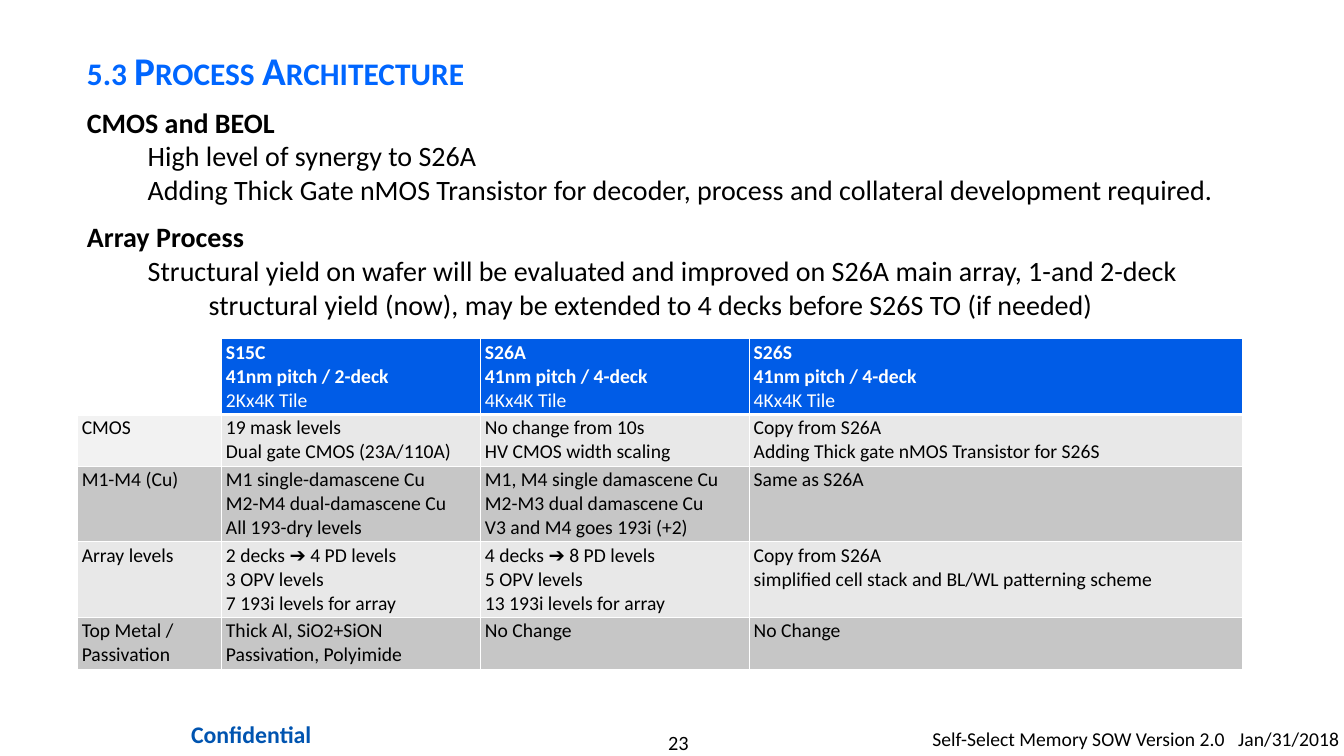
import pptx
import pptx.dml.color
import pptx.enum.text
import pptx.oxml.ns
import pptx.util
from lxml import etree

Pt = pptx.util.Pt
RGBColor = pptx.dml.color.RGBColor
PP_ALIGN = pptx.enum.text.PP_ALIGN
MSO_ANCHOR = pptx.enum.text.MSO_ANCHOR
qn = pptx.oxml.ns.qn

BLACK = RGBColor(0x00, 0x00, 0x00)
WHITE = RGBColor(0xFF, 0xFF, 0xFF)
TITLE_BLUE = RGBColor(0x00, 0x66, 0xFF)
FOOTER_BLUE = RGBColor(0x00, 0x54, 0xB0)
HEADER_BLUE = RGBColor(0x00, 0x5C, 0xE7)
CMOS_GREY = RGBColor(0xF2, 0xF2, 0xF2)
LIGHT_GREY = RGBColor(0xE8, 0xE8, 0xE8)
DARK_GREY = RGBColor(0xC6, 0xC6, 0xC6)

BODY = [
    ("CMOS and BEOL", [
        "High level of synergy to S26A",
        "Adding Thick Gate nMOS Transistor for decoder, process and collateral "
        "development required."]),
    ("Array Process", [
        "Structural yield on wafer will be evaluated and improved on S26A main array, "
        "1-and 2-deck structural yield (now), may be extended to 4 decks before S26S TO "
        "(if needed)"]),
]

COLUMN_WIDTHS = [103, 185, 192, 352]
ROW_HEIGHTS = [54, 37, 54, 54, 37]
TABLE = [
    ["",
     "S15C\n41nm pitch / 2-deck\n2Kx4K Tile",
     "S26A\n41nm pitch / 4-deck\n4Kx4K Tile",
     "S26S\n41nm pitch / 4-deck\n4Kx4K Tile"],
    ["CMOS",
     "19 mask levels\nDual gate CMOS (23A/110A)",
     "No change from 10s\nHV CMOS width scaling",
     "Copy from S26A\nAdding Thick gate nMOS Transistor for S26S"],
    ["M1-M4 (Cu)",
     "M1 single-damascene Cu\nM2-M4 dual-damascene Cu\nAll 193-dry levels",
     "M1, M4 single damascene Cu\nM2-M3 dual damascene Cu\nV3 and M4 goes 193i (+2)",
     "Same as S26A"],
    ["Array levels",
     "2 decks ➔ 4 PD levels\n3 OPV levels\n7 193i levels for array",
     "4 decks ➔ 8 PD levels\n5 OPV levels\n13 193i levels for array",
     "Copy from S26A\nsimplified cell stack and BL/WL patterning scheme"],
    ["Top Metal /\nPassivation",
     "Thick Al, SiO2+SiON Passivation, Polyimide",
     "No Change",
     "No Change"],
]


def add_text(tf, text, size=14, color=BLACK, bold=False, small_caps=False, align=None,
             level=0, before=None, line_spacing=None, indent=None, tab=None):
    """Add one paragraph, filling the frame's first one if it is still empty."""
    p = tf.paragraphs[0] if not tf.text else tf.add_paragraph()
    p.level = level
    if align is not None:
        p.alignment = align
    if before is not None:
        p.space_before = Pt(before)
    if line_spacing is not None:
        p.line_spacing = line_spacing
    pPr = p._p.get_or_add_pPr()
    if indent:
        margin, first = indent
        pPr.set("marL", str(Pt(margin)))
        pPr.set("indent", str(Pt(first)))
    if tab:
        tabs = etree.SubElement(pPr, qn("a:tabLst"))
        etree.SubElement(tabs, qn("a:tab"), pos=str(Pt(tab)), algn="l")
    r = p.add_run()
    r.text = text
    r.font.name = "Calibri"
    r.font.size = Pt(size)
    r.font.bold = bold
    r.font.color.rgb = color
    if small_caps:
        r._r.get_or_add_rPr().set("cap", "small")


def set_margins(target, horizontal, vertical):
    target.margin_left = target.margin_right = Pt(horizontal)
    target.margin_top = target.margin_bottom = Pt(vertical)


def add_text_box(slide, left, top, width, height, margins=(7.2, 3.6), wrap=True,
                 anchor=MSO_ANCHOR.TOP):
    sp = slide.shapes.add_textbox(Pt(left), Pt(top), Pt(width), Pt(height))
    tf = sp.text_frame
    tf.word_wrap = wrap
    tf.vertical_anchor = anchor
    set_margins(tf, *margins)
    return tf


def set_white_borders(cell, bottom):
    tcPr = cell._tc.get_or_add_tcPr()
    for i, (side, width) in enumerate([("L", 1), ("R", 1), ("T", 1), ("B", bottom)]):
        ln = etree.Element(qn("a:ln" + side), w=str(Pt(width)))
        fill = etree.SubElement(ln, qn("a:solidFill"))
        etree.SubElement(fill, qn("a:srgbClr"), val=str(WHITE))
        tcPr.insert(i, ln)


def cell_fill(row, col):
    if row == 0:
        return HEADER_BLUE if col else WHITE
    if (row, col) == (1, 0):
        return CMOS_GREY
    return LIGHT_GREY if row % 2 else DARK_GREY


def add_process_table(slide):
    frame = slide.shapes.add_table(len(TABLE), len(COLUMN_WIDTHS), Pt(55.5), Pt(242),
                                   Pt(sum(COLUMN_WIDTHS)), Pt(sum(ROW_HEIGHTS)))
    table = frame.table
    table.horz_banding = False
    for column, width in zip(table.columns, COLUMN_WIDTHS):
        column.width = Pt(width)
    for i, (row, height) in enumerate(zip(table.rows, ROW_HEIGHTS)):
        row.height = Pt(height)
        header = i == 0
        for j, cell in enumerate(row.cells):
            set_margins(cell, 2.9, 1.4)
            cell.fill.solid()
            cell.fill.fore_color.rgb = cell_fill(i, j)
            set_white_borders(cell, bottom=3 if header else 1)
            if not TABLE[i][j]:
                continue
            for k, line in enumerate(TABLE[i][j].split("\n")):
                add_text(cell.text_frame, line, color=WHITE if header else BLACK,
                         bold=header and k < 2)


def add_body(slide):
    tf = add_text_box(slide, 55, 71.5, 859, 166)
    for i, (heading, lines) in enumerate(BODY):
        add_text(tf, heading, size=20, bold=True, before=10 if i else None)
        for line in lines:
            add_text(tf, line, size=20, level=1, indent=(87, -43.5))


def add_footer(slide):
    add_text(add_text_box(slide, 400.5, 521.5, 168, 17.5, margins=(0, 0)),
             "23", size=14.5, align=PP_ALIGN.CENTER)
    add_text(add_text_box(slide, 111.5, 510, 136, 29.5, margins=(8.6, 4.3)),
             "Confidential", size=17, color=FOOTER_BLUE, bold=True, align=PP_ALIGN.CENTER)
    add_text(add_text_box(slide, 666, 515.5, 294, 24.5, margins=(0, 3.6), wrap=False),
             "Self-Select Memory SOW Version 2.0\tJan/31/2018", tab=218.5)


def main():
    prs = pptx.Presentation()
    prs.slide_width, prs.slide_height = Pt(960), Pt(540)
    slide = prs.slides.add_slide(prs.slide_layouts[6])
    add_footer(slide)
    title = add_text_box(slide, 55, 15, 796, 66, anchor=MSO_ANCHOR.MIDDLE)
    add_text(title, "5.3 Process Architecture", size=28, color=TITLE_BLUE, bold=True,
             small_caps=True, line_spacing=1.1)
    add_body(slide)
    add_process_table(slide)
    prs.save("out.pptx")


if __name__ == "__main__":
    main()
